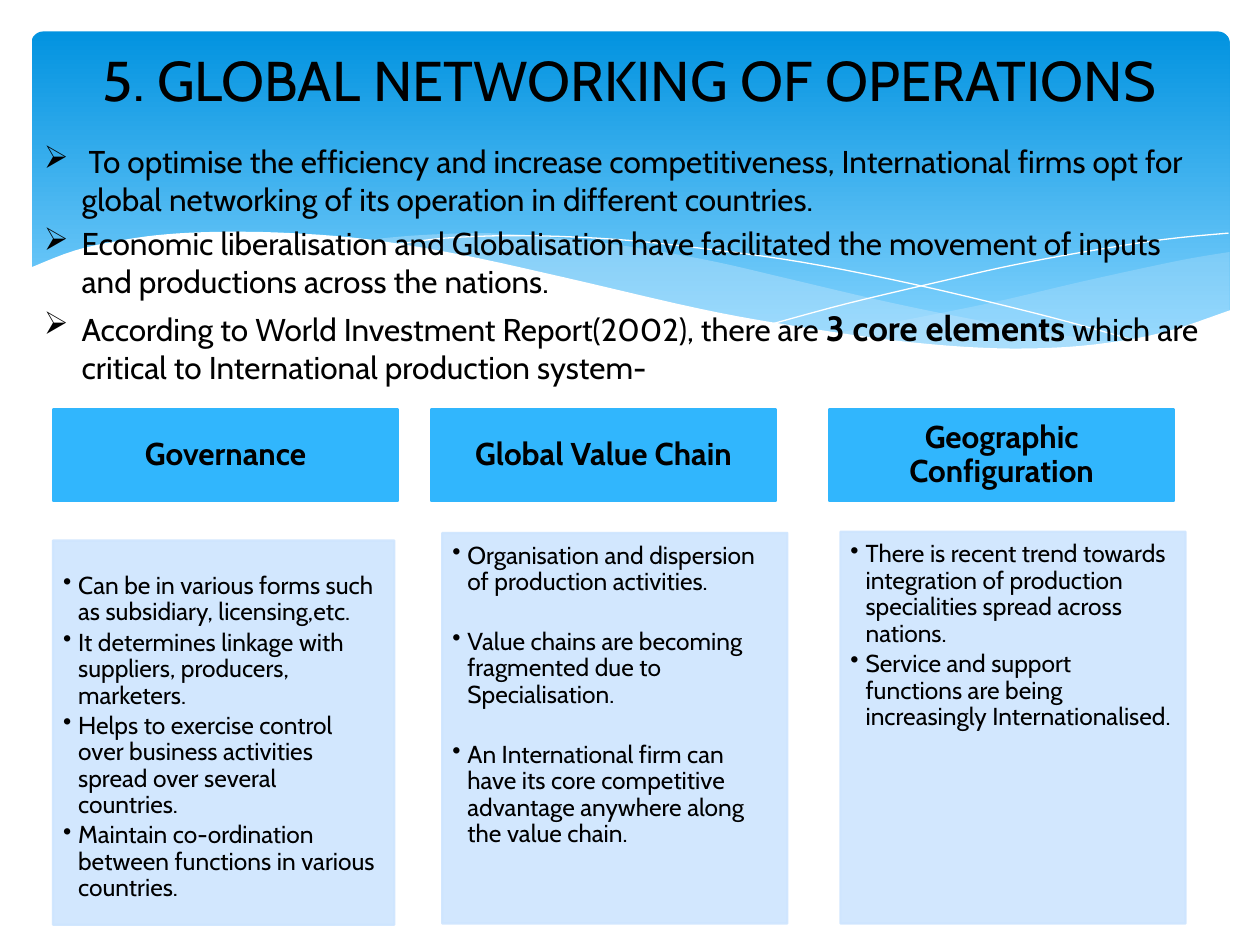
import lxml.etree as et
import pptx
import pptx.dml.color
import pptx.enum.shapes
import pptx.enum.text
import pptx.oxml.ns
import pptx.util

Inches, Pt = pptx.util.Inches, pptx.util.Pt
SHAPE = pptx.enum.shapes.MSO_SHAPE
ANCHOR = pptx.enum.text.MSO_ANCHOR
ALIGN = pptx.enum.text.PP_ALIGN
qn = pptx.oxml.ns.qn


def rgb(code):
    return pptx.dml.color.RGBColor.from_string(code)


def curve(pts, steps=5):
    """Points along a smooth line through pts (Catmull-Rom)."""
    ends = [pts[0], *pts, pts[-1]]
    out = [pts[0]]
    for a, b, c, d in zip(ends, ends[1:], ends[2:], ends[3:]):
        for i in range(1, steps + 1):
            t = i / steps
            out.append(tuple(
                (2 * q + (r - p) * t + (2 * p - 5 * q + 4 * r - s) * t ** 2
                 + (3 * q - p - 3 * r + s) * t ** 3) / 2
                for p, q, r, s in zip(a, b, c, d)))
    return out


class Deck:
    font, ink = "Cabin", "000000"

    def __init__(self, wide, high):
        self.prs = pptx.Presentation()
        self.prs.slide_width, self.prs.slide_height = Inches(wide), Inches(high)
        self.slide = self.prs.slides.add_slide(self.prs.slide_layouts[6])

    def paint(self, part, code, alpha=None):
        """Solid colour for a fill or a line's fill."""
        part.solid()
        part.fore_color.rgb = rgb(code)
        if alpha is not None:
            tint = part._xPr.find(qn("a:solidFill"))[0]
            et.SubElement(tint, qn("a:alpha"), val=str(alpha * 1000))

    def panel(self, box, top, base):
        """Rounded panel with a vertical gradient."""
        item = self.slide.shapes.add_shape(SHAPE.ROUNDED_RECTANGLE, *map(Inches, box))
        item.adjustments[0] = 0.034
        item.shadow.inherit = False
        item.line.fill.background()
        item.fill.gradient()
        item.fill.gradient_angle = 270
        for stop, code, pos in zip(item.fill.gradient_stops, (top, base), (0, 0.9)):
            stop.color.rgb, stop.position = rgb(code), pos

    def wave(self, pts, code, alpha=None):
        """Filled outline."""
        item = self.trace(pts, True)
        self.paint(item.fill, code, alpha)
        item.line.fill.background()

    def strand(self, pts, code):
        """Open hairline."""
        item = self.trace(pts, False)
        item.fill.background()
        self.paint(item.line.fill, code)
        item.line.width = Pt(0)

    def trace(self, pts, close):
        dots = [(Inches(x), Inches(y)) for x, y in pts]
        pen = self.slide.shapes.build_freeform(*dots[0])
        pen.add_line_segments(dots[1:], close=close)
        item = pen.convert_to_shape()
        item.shadow.inherit = False
        return item

    def block(self, box, code, alpha=None):
        """Filled rectangle."""
        item = self.slide.shapes.add_shape(SHAPE.RECTANGLE, *map(Inches, box))
        item.shadow.inherit = False
        self.paint(item.fill, code, alpha)
        self.paint(item.line.fill, code, alpha)
        item.line.width = Pt(1.25)
        return item

    def label(self, box):
        """Empty text box."""
        return self.slide.shapes.add_textbox(*map(Inches, box))

    def put_text(self, item, paras, size, mark=None, hang=0, align=ALIGN.LEFT,
                 anchor=ANCHOR.TOP, inset=(0.1, 0.05, 0.1, 0.05),
                 lead=1, before=0, after=0):
        """Paragraphs are lists of (text, size or None, bold) runs."""
        frame = item.text_frame
        frame.word_wrap = True
        frame.vertical_anchor = anchor
        (frame.margin_left, frame.margin_top,
         frame.margin_right, frame.margin_bottom) = map(Inches, inset)
        for i, runs in enumerate(paras):
            para = frame.add_paragraph() if i else frame.paragraphs[0]
            para.alignment, para.line_spacing = align, lead
            para.space_before, para.space_after = Pt(before), Pt(after)
            if mark:
                props = para._p.get_or_add_pPr()
                props.set("marL", str(Inches(hang)))
                props.set("indent", str(-Inches(hang)))
                et.SubElement(props, qn("a:buChar"), char=mark)
            for text, own, bold in runs:
                run = para.add_run()
                run.text = text
                run.font.name, run.font.bold = self.font, bold
                run.font.size = Pt(own or size)
                run.font.color.rgb = rgb(self.ink)


def plain(*texts):
    return [[(text, None, False)] for text in texts]


def main():
    deck = Deck(10, 7.5)

    # Backdrop: gradient panel and waves
    deck.panel((0.25, 0.25, 9.51, 2.7), "0293E0", "83D3FE")
    deck.wave(
        curve([(9.76, 2), (9.35, 2.07), (8.61, 2.23), (7.79, 2.42), (6.61, 2.65)])
        + curve([(6.61, 2.65), (7.19, 2.72), (7.69, 2.77), (8.14, 2.78), (8.63, 2.75),
                 (9.05, 2.69), (9.42, 2.59), (9.76, 2.47)]), "C6E7FC", 29)
    deck.wave(
        curve([(8.93, 2.73), (8.37, 2.65), (7.75, 2.54), (7.06, 2.4), (6.29, 2.22),
               (5.69, 2.08), (5.14, 1.98), (4.65, 1.91), (4.2, 1.87), (3.8, 1.85),
               (3.28, 1.87), (2.86, 1.91)])
        + curve([(2.86, 1.91), (3.42, 1.99), (4.04, 2.11), (4.91, 2.32), (5.66, 2.48),
                 (6.34, 2.61), (6.95, 2.7), (7.48, 2.76), (7.96, 2.78), (8.48, 2.77),
                 (8.93, 2.73)]), "C6E7FC", 40)
    deck.strand(curve([(3.09, 1.95), (3.53, 1.89), (4.16, 1.87), (4.89, 1.9),
                       (5.56, 1.97), (6.36, 2.08), (7.27, 2.26), (8.31, 2.51),
                       (9.07, 2.72)]), "FFFFFF")
    deck.strand(curve([(6.13, 2.57), (6.72, 2.41), (7.48, 2.23), (8.06, 2.1),
                       (8.66, 1.99), (9.24, 1.9), (9.75, 1.85)]), "FFFFFF")
    deck.wave(
        curve([(9.77, 2.46), (9.3, 2.62), (8.87, 2.71), (8.37, 2.76), (7.78, 2.76),
               (7.08, 2.7), (6.26, 2.58), (5.55, 2.45), (4.47, 2.2), (3.65, 2.02),
               (2.92, 1.9), (2.3, 1.85), (1.77, 1.84), (1.32, 1.86), (0.95, 1.91),
               (0.59, 1.99), (0.23, 2.13)])
        + [(0.23, 3.29), (9.77, 3.29)], "FFFFFF")

    # Main points
    points = plain(
        " To optimise the efficiency and increase competitiveness, International "
        "firms opt for global networking of its operation in different countries.",
        "Economic liberalisation and Globalisation have facilitated the movement "
        "of inputs and productions across the nations.")
    points.append([
        ("According to World Investment Report(2002), there are ", None, False),
        ("3 core elements", 20, True),
        (" which are critical to International production system-", None, False)])
    deck.put_text(deck.label((0.25, 1.08, 9.5, 6.25)), points, 18, "➢", 0.3,
                  before=3.6)

    # Title
    deck.put_text(deck.label((0.5, 0.25, 9, 0.75)),
                  plain("5. GLOBAL NETWORKING OF OPERATIONS"), 32,
                  align=ALIGN.CENTER, anchor=ANCHOR.MIDDLE)

    # Core elements: head, head left, body box, body top inset, gap, points
    cores = [
        ("Governance", 0.42, (0.42, 4.29, 2.71, 3.05), 0.26, 2.1,
         ["Can be in various forms such as subsidiary, licensing,etc.",
          "It determines linkage with suppliers, producers, marketers.",
          "Helps to exercise control over business activities spread over several "
          "countries.",
          "Maintain co-ordination between functions in various countries."]),
        ("Global Value Chain", 3.42, (3.51, 4.23, 2.74, 3.1), 0.08, 19,
         ["Organisation and dispersion of production activities.",
          "Value chains are becoming fragmented due to Specialisation.",
          "An International firm can have its core competitive advantage anywhere "
          "along the value chain."]),
        ("Geographic Configuration", 6.58, (6.67, 4.22, 2.74, 3.11), 0.08, 2.1,
         ["There is recent trend towards integration of production specialities "
          "spread across nations.",
          "Service and support functions are being increasingly "
          "Internationalised."]),
    ]
    for head, left, box, inset, gap, texts in cores:
        deck.put_text(deck.block((left, 3.25, 2.74, 0.73), "31B6FD"),
                      [[(head, None, True)]], 18, align=ALIGN.CENTER,
                      anchor=ANCHOR.MIDDLE, inset=(0.14, 0.08, 0.14, 0.08), lead=0.9)
        deck.put_text(deck.block(box, "CEE5FE", 90), plain(*texts), 14, "•", 0.12,
                      inset=(0.08, inset, 0.11, 0), lead=0.9, after=gap)

    deck.prs.save("out.pptx")


if __name__ == "__main__":
    main()
